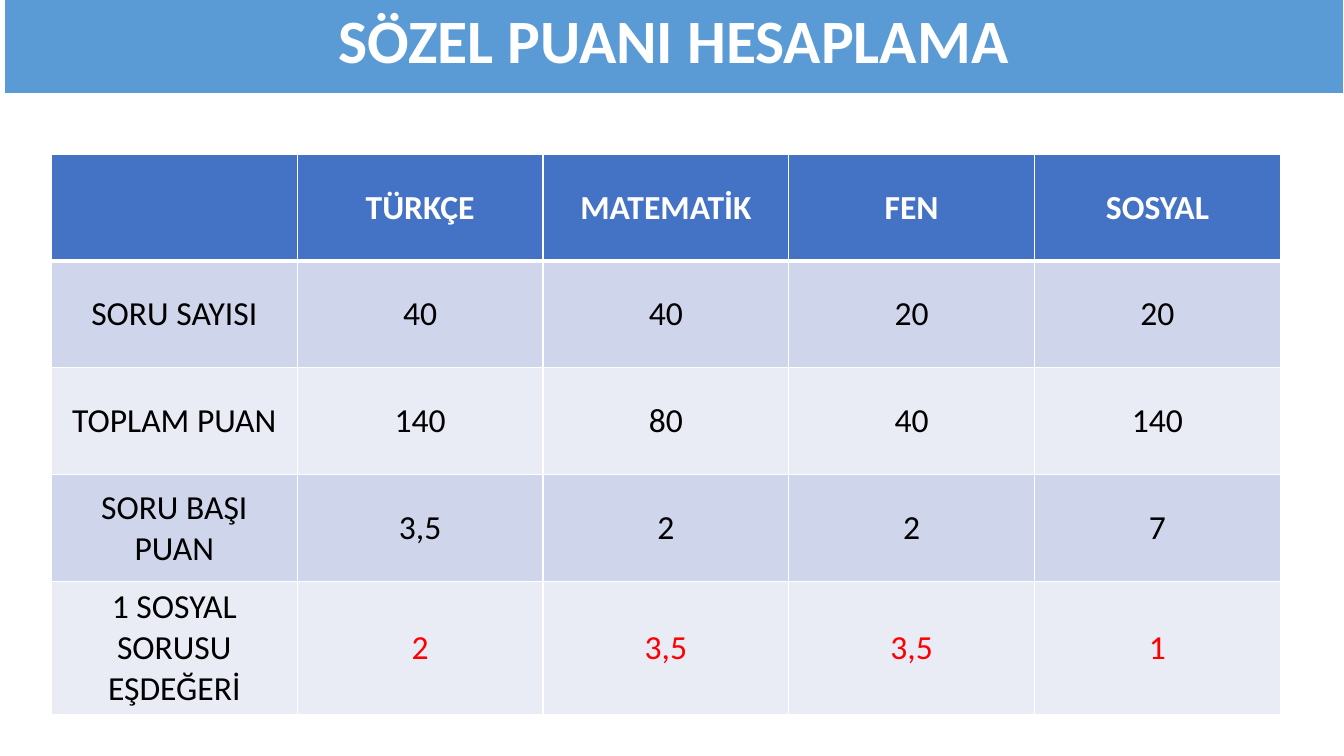
"""Build the slide that explains how the verbal score is calculated."""
import dataclasses

import lxml.etree
import pptx
import pptx.dml.color
import pptx.enum.text
import pptx.oxml.ns
import pptx.util


@dataclasses.dataclass(frozen=True)
class Theme:
    font: str = "Calibri"
    white: str = "FFFFFF"
    black: str = "000000"
    red: str = "FF0000"
    banner: str = "5B9BD5"
    header: str = "4472C4"
    bands: tuple = ("E9EBF5", "CFD5EA")
    title_size: int = 44
    cell_size: int = 24


theme = Theme()
Inches = pptx.util.Inches
Pt = pptx.util.Pt
color = pptx.dml.color.RGBColor.from_string
middle = pptx.enum.text.MSO_ANCHOR.MIDDLE
center = pptx.enum.text.PP_ALIGN.CENTER


def write(frame, text, size, hue, bold):
    """Put one centred, formatted line of text in a frame."""
    para = frame.paragraphs[0]
    para.alignment = center
    span = para.add_run()
    span.text = text
    span.font.color.rgb = color(hue)
    for name, value in {"name": theme.font, "size": Pt(size), "bold": bold}.items():
        setattr(span.font, name, value)
    return para


def add_border(cell, position, side, points):
    """Draw a white border on one side of a cell."""
    qn = pptx.oxml.ns.qn
    line = lxml.etree.Element(qn(f"a:ln{side}"), w=str(Pt(points)))
    fill = lxml.etree.SubElement(line, qn("a:solidFill"))
    lxml.etree.SubElement(fill, qn("a:srgbClr"), val=theme.white)
    cell._tc.get_or_add_tcPr().insert(position, line)


deck = pptx.Presentation()
deck.slide_width = Inches(13.33)
deck.slide_height = Inches(7.5)
page = deck.slides.add_slide(deck.slide_layouts[5])

title = page.shapes.title
banner_place = {"left": 0.04, "top": -0.06, "width": 13.29, "height": 0.99}
for name, value in banner_place.items():
    setattr(title, name, Inches(value))
title.fill.solid()
title.fill.fore_color.rgb = color(theme.banner)
title.line.color.rgb = color(theme.white)
title.line.width = Pt(1.5)
title_format = {
    "word_wrap": True,
    "auto_size": pptx.enum.text.MSO_AUTO_SIZE.NONE,
    "vertical_anchor": middle,
}
for name, value in title_format.items():
    setattr(title.text_frame, name, value)
heading = write(title.text_frame, "SÖZEL PUANI HESAPLAMA", theme.title_size, theme.white, True)
heading.line_spacing = 0.9

scores = [
    ["", "TÜRKÇE", "MATEMATİK", "FEN", "SOSYAL"],
    ["SORU SAYISI", "40", "40", "20", "20"],
    ["TOPLAM PUAN", "140", "80", "40", "140"],
    ["SORU BAŞI PUAN", "3,5", "2", "2", "7"],
    ["1 SOSYAL SORUSU EŞDEĞERİ", "2", "3,5", "3,5", "1"],
]
last_row = len(scores) - 1
table = page.shapes.add_table(
    len(scores), len(scores[0]), Inches(0.51), Inches(1.53), Inches(12.19), Inches(5.3)
).table

for row, values in enumerate(scores):
    table.rows[row].height = Inches(1.06)
    is_header = row == 0
    widths = {"L": 1, "R": 1, "T": 3 if row == 1 else 1, "B": 3 if is_header else 1}
    for column, text in enumerate(values):
        cell = table.cell(row, column)
        cell.vertical_anchor = middle
        cell.fill.solid()
        cell.fill.fore_color.rgb = color(theme.header if is_header else theme.bands[row % 2])
        for position, (side, points) in enumerate(widths.items()):
            add_border(cell, position, side, points)
        if is_header:
            hue = theme.white
        elif row == last_row and column > 0:
            hue = theme.red
        else:
            hue = theme.black
        if text:
            write(cell.text_frame, text, theme.cell_size, hue, is_header)

deck.save("out.pptx")
